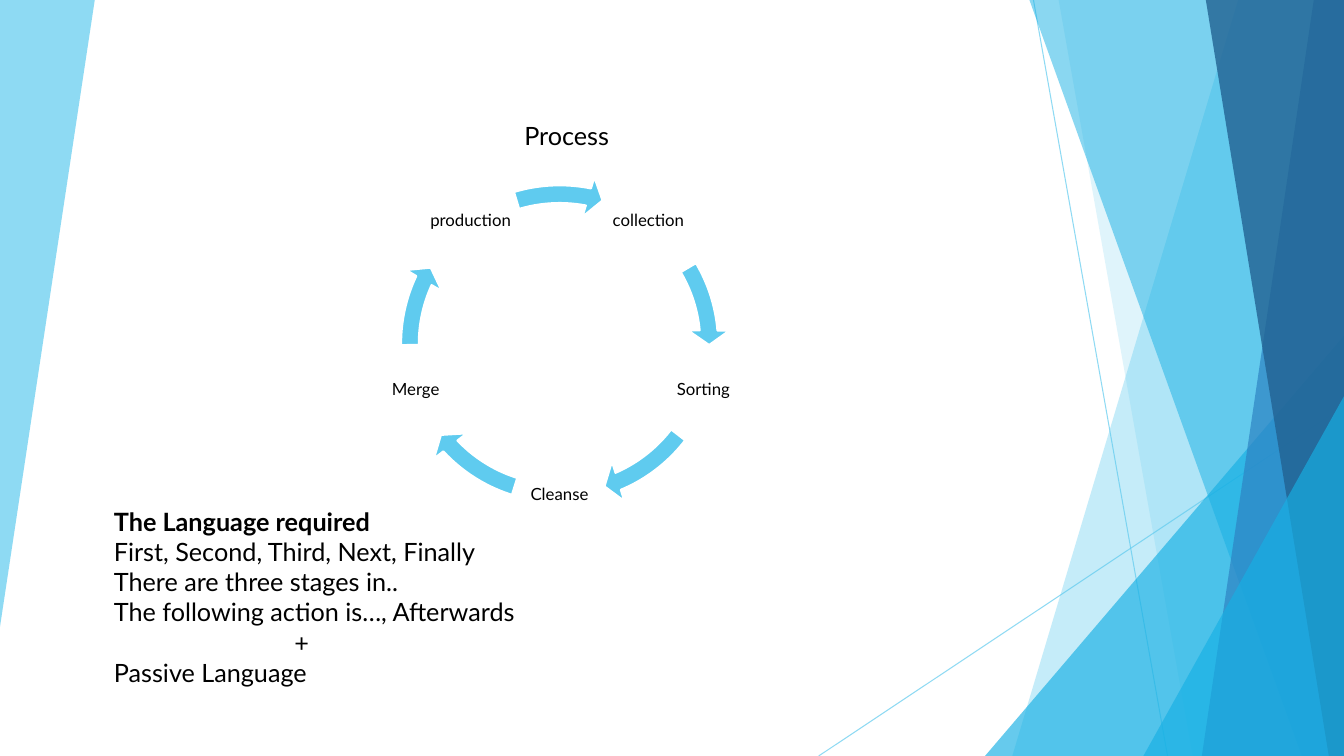
import math

import lxml.etree
import pptx
import pptx.dml.color
import pptx.enum.shapes
import pptx.enum.text
import pptx.oxml.ns
import pptx.util

Inches = pptx.util.Inches
RGBColor = pptx.dml.color.RGBColor
Shape = pptx.enum.shapes.MSO_SHAPE
Align = pptx.enum.text.PP_ALIGN
Anchor = pptx.enum.text.MSO_ANCHOR
qn = pptx.oxml.ns.qn

SKY = RGBColor(0x5F, 0xCB, 0xEF)
CYAN = RGBColor(0x17, 0xB0, 0xE4)
BLUE = RGBColor(0x2E, 0x83, 0xC3)
NAVY = RGBColor(0x22, 0x62, 0x92)
WHITE = RGBColor(0xFF, 0xFF, 0xFF)
BLACK = RGBColor(0, 0, 0)
WIDTH, HEIGHT = 13.33, 7.5


def set_fill(fill, color, opacity):
    """Fill with a solid colour; opacity is a percentage."""
    fill.solid()
    fill.fore_color.rgb = color
    color_xml = fill._xPr.find(qn("a:solidFill"))[0]
    lxml.etree.SubElement(color_xml, qn("a:alpha"), val=str(opacity * 1000))


def write_text(box, lines, size, align=Align.LEFT, anchor=Anchor.TOP, margins=(0.1, 0.05),
               wrap=True, line_spacing=1.0, bold_lines=()):
    frame = box.text_frame
    frame.text = "\n".join(lines)
    frame.auto_size = pptx.enum.text.MSO_AUTO_SIZE.NONE
    frame.word_wrap = wrap
    frame.vertical_anchor = anchor
    frame.margin_left = frame.margin_right = Inches(margins[0])
    frame.margin_top = frame.margin_bottom = Inches(margins[1])
    for para in frame.paragraphs:
        para.alignment = align
        para.line_spacing = line_spacing
        para.space_before = para.space_after = pptx.util.Pt(0)
        for span in para.runs:
            span.font.name = "Lato"
            span.font.size = pptx.util.Pt(size)
            span.font.bold = span.text in bold_lines
            span.font.color.rgb = BLACK


deck = pptx.Presentation()
deck.slide_width, deck.slide_height = Inches(WIDTH), Inches(HEIGHT)
page = deck.slides.add_slide(deck.slide_layouts[1])
shapes = page.shapes
title, body = page.placeholders

# Background facets, from back to front
left_facet = [(0, 0), (0.94, 0), (0, 6.22)]
ray_ends = [(10.25, 0, 11.58, HEIGHT), (WIDTH, 4.03, 8.12, HEIGHT)]


def right_facet(top, bottom):
    """Corners of a panel that reaches from a slanted edge to the right side."""
    return [(top, 0), (WIDTH, 0), (WIDTH, HEIGHT), (bottom, HEIGHT)]


facets = [
    (left_facet, SKY, 70),
    (right_facet(12.28, 10.04), SKY, 36),
    (right_facet(10.5, 11.83), SKY, 20),
    ((9.77, 3.33), CYAN, 66),
    (right_facet(10.21, 12.91), CYAN, 50),
    (right_facet(13.03, 11.92), BLUE, 70),
    (right_facet(11.96, 13.18), NAVY, 80),
    ((11.34, 3.93), CYAN, 66),
]

for x1, y1, x2, y2 in ray_ends:
    ray = shapes.add_connector(pptx.enum.shapes.MSO_CONNECTOR.STRAIGHT,
                               Inches(x1), Inches(y1), Inches(x2), Inches(y2))
    ray.line.width = pptx.util.Pt(0.75)
    set_fill(ray.line.fill, SKY, 70)
    lxml.etree.SubElement(ray._element.spPr, qn("a:effectLst"))

for outline, color, opacity in facets:
    if isinstance(outline, list):
        points = [(Inches(x), Inches(y)) for x, y in outline]
        builder = shapes.build_freeform(*points[0])
        builder.add_line_segments(points[1:], close=True)
        facet = builder.convert_to_shape()
    else:
        left, top = outline
        facet = shapes.add_shape(Shape.ISOSCELES_TRIANGLE, Inches(left), Inches(top),
                                 Inches(WIDTH - left), Inches(HEIGHT - top))
        facet.adjustments[0] = 1
    facet.shadow.inherit = False
    set_fill(facet.fill, color, opacity)
    facet.line.fill.background()

# Process cycle: stage, then end and start angle of the arrow's arc
stages = [
    ("collection", 212.94, 197.655),
    ("Sorting", 40.155, 22.527),
    ("Cleanse", 82.116, 64.488),
    ("Merge", 122.987, 107.702),
    ("production", 168.665, 151.978),
]
CENTER_X, CENTER_Y, RADIUS = 5.55, 3.41, 1.5
LABEL, RING = 0.9, 3.38

for index, (stage, arc_end, arc_start) in enumerate(stages):
    angle = math.radians(-54 + index * 360 / len(stages))
    label = shapes.add_textbox(
        Inches(CENTER_X + RADIUS * math.cos(angle) - LABEL / 2),
        Inches(CENTER_Y + RADIUS * math.sin(angle) - LABEL / 2),
        Inches(LABEL), Inches(LABEL))
    write_text(label, [stage], 12, align=Align.CENTER, anchor=Anchor.MIDDLE,
               margins=(0.02, 0.02), line_spacing=0.9)

    arrow = shapes.add_shape(Shape.CIRCULAR_ARROW, Inches(CENTER_X - RING / 2),
                             Inches(CENTER_Y - RING / 2), Inches(RING), Inches(RING))
    for number, value in enumerate((0.052, 3.357, arc_end, arc_start, 0.061)):
        arrow.adjustments[number] = value
    arrow.shadow.inherit = False
    arrow.fill.solid()
    arrow.fill.fore_color.rgb = SKY
    arrow.line.color.rgb = WHITE
    arrow.line.width = pptx.util.Pt(1.5)

# Title and language notes, in front of the facets
for box, bounds in ((title, (5.05, 1.14, 1.2, 0.4)), (body, (1.03, 4.97, 4.34, 2.22))):
    box.left, box.top, box.width, box.height = map(Inches, bounds)
    shapes._spTree.append(box._element)

write_text(title, ["Process"], 18, margins=(0.15, 0.05))
language_lines = [
    "The Language required",
    "First, Second, Third, Next, Finally",
    "There are three stages in..",
    "The following action is…, Afterwards",
    "+",
    "Passive Language",
]
write_text(body, language_lines, 18, wrap=False, bold_lines=language_lines[:1])
for para in body.text_frame.paragraphs:
    properties = para._p.get_or_add_pPr()
    properties.set("marL", str(Inches(1.79 if para.text == "+" else 0)))
    properties.set("indent", "0")
    lxml.etree.SubElement(properties, qn("a:buNone"))

deck.save("out.pptx")
